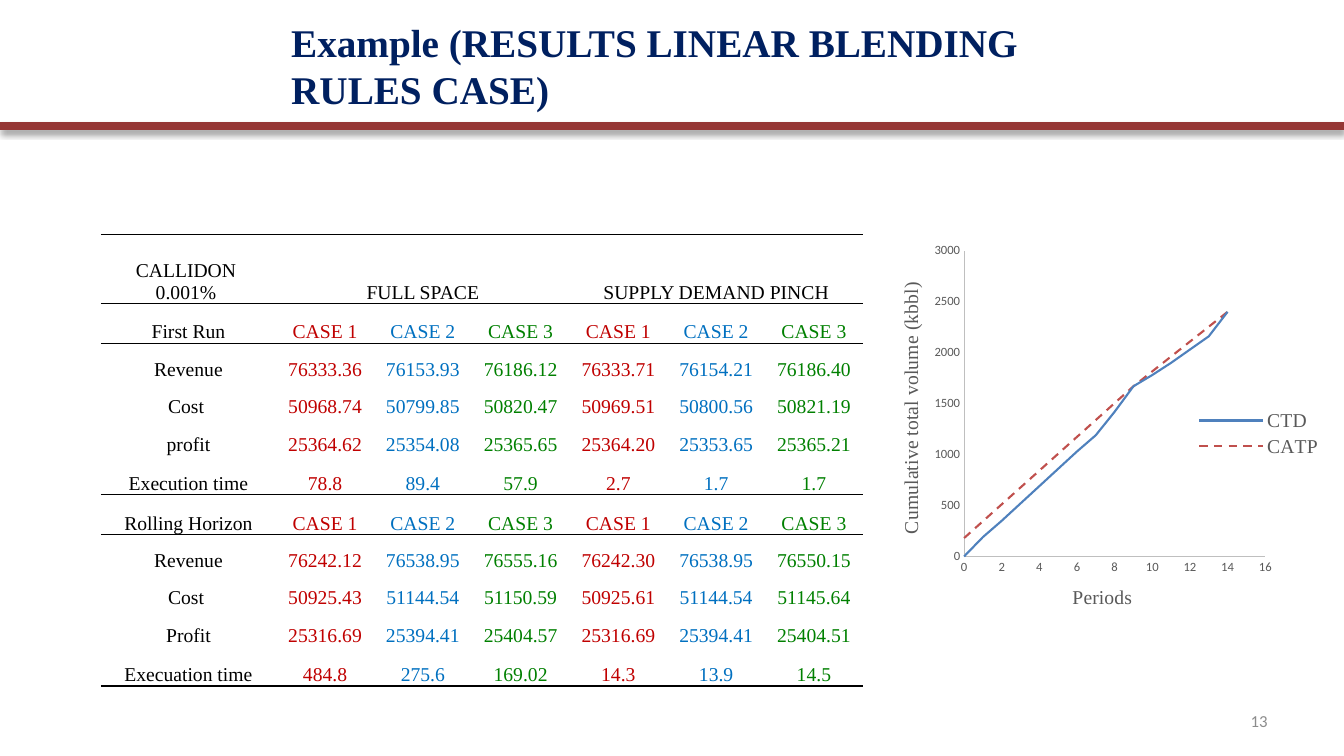
from lxml import etree
from pptx import Presentation
from pptx.chart.data import XyChartData
from pptx.dml.color import RGBColor
from pptx.enum.chart import XL_CHART_TYPE as ChartType, XL_LEGEND_POSITION as LegendPos, XL_TICK_MARK as TickMark
from pptx.enum.dml import MSO_LINE_DASH_STYLE as Dash
from pptx.enum.shapes import MSO_CONNECTOR as Connector
from pptx.enum.text import MSO_ANCHOR as Anchor, PP_ALIGN as Align
from pptx.oxml.ns import qn
from pptx.util import Inches, Pt

WIDTH, HEIGHT = Inches(13.33), Inches(7.5)
SERIF, SANS = "Times New Roman", "Calibri"
BLACK, GREY, AXIS_GREY = "000000", "595959", "BFBFBF"
CASE_COLOURS = ["C00000", "0070C0", "008000"] * 2
CASES = ["CASE 1", "CASE 2", "CASE 3"] * 2
NO_STYLE = "{2D5ABB26-0587-4C30-8999-92F81FD0307C}"

HEADER = ["CALLIDON \n0.001% ", "FULL SPACE", "", "", "SUPPLY DEMAND PINCH", "", ""]
RESULTS = [
    ["First Run", *CASES],
    ["Revenue", "76333.36", "76153.93", "76186.12", "76333.71", "76154.21", "76186.40"],
    ["Cost ", "50968.74", "50799.85", "50820.47", "50969.51", "50800.56", "50821.19"],
    ["profit", "25364.62", "25354.08", "25365.65", "25364.20", "25353.65", "25365.21"],
    ["Execution time", "78.8", "89.4", "57.9", "2.7", "1.7", "1.7"],
    ["Rolling Horizon", *CASES],
    ["Revenue", "76242.12", "76538.95", "76555.16", "76242.30", "76538.95", "76550.15"],
    ["Cost ", "50925.43", "51144.54", "51150.59", "50925.61", "51144.54", "51145.64"],
    ["Profit", "25316.69", "25394.41", "25404.57", "25316.69", "25394.41", "25404.51"],
    ["Execuation time", "484.8", "275.6", "169.02", "14.3", "13.9", "14.5"],
]
ROWS_RULED_ABOVE = {0, 1, 6}
ROWS_RULED_BELOW = {0, 5, 10}
COLUMN_SHARES = [1.74] + [0.97] * 6
ROW_SHARES = [0.68, 0.39] + ([0.37] * 3 + [0.39]) + [0.39] + ([0.37] * 3 + [0.39])

CTD = list(enumerate([0, 190, 350, 520, 690, 860, 1030, 1190, 1420, 1670, 1780, 1900, 2030, 2160, 2400]))
CATP = [(0, 180), (9, 1670), (14, 2400)]


def colour(hex_string):
    return RGBColor.from_string(hex_string)


def percent_box(left, top, width, height):
    return [round(side * share / 100) for side, share in
            zip((WIDTH, HEIGHT, WIDTH, HEIGHT), (left, top, width, height))]


def assign(target, values):
    for name, value in values.items():
        setattr(target, name, value)


def style_font(font, size, name, hex_string, bold=False):
    assign(font, {"size": Pt(size), "name": name, "bold": bold})
    font.color.rgb = colour(hex_string)


def child(parent, tag, **attributes):
    return etree.SubElement(parent, qn(tag), attributes)


def solid_fill(parent, hex_string):
    return child(child(parent, "a:solidFill"), "a:srgbClr", val=hex_string)


def add_text(slide, box, text, size, name, hex_string, bold=False, align=Align.LEFT, anchor=Anchor.TOP):
    frame = slide.shapes.add_textbox(*box).text_frame
    assign(frame, {"word_wrap": True, "vertical_anchor": anchor, "text": text})
    frame.paragraphs[0].alignment = align
    style_font(frame.paragraphs[0].runs[0].font, size, name, hex_string, bold)


def add_header_rule(slide, box):
    left, top, width, height = box
    rule = slide.shapes.add_connector(Connector.STRAIGHT, left, top, left + width, top + height)
    rule.line.width = Pt(6)
    rule.line.color.rgb = colour("953735")
    effects = child(rule.element.spPr, "a:effectLst")
    shadow = child(effects, "a:outerShdw", blurRad=str(Pt(4)), dist=str(Pt(3)), dir="5400000", rotWithShape="0")
    child(child(shadow, "a:srgbClr", val=BLACK), "a:alpha", val="40000")


def add_border(cell, side):
    properties = cell._tc.get_or_add_tcPr()
    border = etree.Element(qn(f"a:ln{side}"), w=str(Pt(1)))
    solid_fill(border, BLACK)
    properties.insert(0, border)


def fill_cell(cell, text, hex_string):
    assign(cell, {"text": text, "vertical_anchor": Anchor.BOTTOM, "margin_bottom": 0,
                  "margin_left": Inches(0.01), "margin_right": Inches(0.01), "margin_top": Inches(0.01)})
    cell.fill.background()
    for paragraph in cell.text_frame.paragraphs:
        paragraph.alignment = Align.CENTER
        style_font(paragraph.font, 14, SERIF, hex_string)
        for run in paragraph.runs:
            style_font(run.font, 14, SERIF, hex_string)


def add_results_table(slide, box):
    rows = [HEADER, *RESULTS]
    frame = slide.shapes.add_table(len(rows), len(HEADER), *box)
    for style_id in frame.element.iter(qn("a:tableStyleId")):
        style_id.text = NO_STYLE
    table = frame.table
    assign(table, {"first_row": False, "horz_banding": False})
    for column, share in zip(table.columns, COLUMN_SHARES):
        column.width = round(box[2] * share / sum(COLUMN_SHARES))
    for row, share in zip(table.rows, ROW_SHARES):
        row.height = round(box[3] * share / sum(ROW_SHARES))
    for r, texts in enumerate(rows):
        colours = [BLACK] * len(HEADER) if r == 0 else [BLACK, *CASE_COLOURS]
        for c, (text, hex_string) in enumerate(zip(texts, colours)):
            cell = table.cell(r, c)
            fill_cell(cell, text, hex_string)
            if r in ROWS_RULED_BELOW:
                add_border(cell, "B")
            if r in ROWS_RULED_ABOVE:
                add_border(cell, "T")
    for start in (1, 4):
        table.cell(0, start).merge(table.cell(0, start + 2))


def place_chart_part(part, index, **shares):
    for old_layout in part.findall(qn("c:layout")):
        part.remove(old_layout)
    layout = etree.Element(qn("c:layout"))
    manual = child(layout, "c:manualLayout")
    if part.tag == qn("c:plotArea"):
        child(manual, "c:layoutTarget", val="inner")
    for mode in ("xMode", "yMode"):
        child(manual, f"c:{mode}", val="edge")
    for name, share in shares.items():
        child(manual, f"c:{name}", val=str(share))
    part.insert(index, layout)


def style_axis(axis, title, maximum, step, rotation, x, y):
    assign(axis, {"minimum_scale": 0, "maximum_scale": maximum, "major_unit": step,
                  "has_major_gridlines": False, "major_tick_mark": TickMark.NONE,
                  "minor_tick_mark": TickMark.NONE})
    axis.format.line.width = Pt(0.75)
    axis.format.line.color.rgb = colour(AXIS_GREY)
    style_font(axis.tick_labels.font, 9, SANS, GREY)
    frame = axis.axis_title.text_frame
    frame.text = title
    style_font(frame.paragraphs[0].runs[0].font, 14, SERIF, GREY)
    title_part = axis._element.find(qn("c:title"))
    body = title_part.find(".//" + qn("a:bodyPr"))
    body.set("rot", rotation)
    body.set("vert", "horz")
    place_chart_part(title_part, 1, x=x, y=y)


def add_volume_chart(slide, box):
    data = XyChartData()
    for name, points in (("CTD", CTD), ("CATP", CATP)):
        series = data.add_series(name)
        for period, volume in points:
            series.add_data_point(period, volume)
    chart = slide.shapes.add_chart(ChartType.XY_SCATTER_LINES_NO_MARKERS, *box, data).chart
    assign(chart, {"has_title": False, "has_legend": True})
    style_font(chart.font, 10, SANS, BLACK)
    plot = chart.plots[0]
    plot.vary_by_categories = False
    for series, hex_string, dash in zip(plot.series, ("4F81BD", "C0504D"), (Dash.SOLID, Dash.DASH)):
        series.smooth = False
        assign(series.format.line, {"width": Pt(1.5), "dash_style": dash})
        series.format.line.color.rgb = colour(hex_string)
    style_axis(chart.category_axis, "Periods", 16, 2, "0", 0.4, 0.87)
    style_axis(chart.value_axis, "Cumulative total volume (kbbl)", 3000, 500, "-5400000", 0, 0.11)
    assign(chart.legend, {"position": LegendPos.RIGHT, "include_in_layout": False})
    style_font(chart.legend.font, 14, SERIF, GREY)
    place_chart_part(chart.element.find(".//" + qn("c:legend")), 1, x=0.69, y=0.43, w=0.29, h=0.14)
    place_chart_part(chart.element.find(".//" + qn("c:plotArea")), 0, x=0.16, y=0.04, w=0.69, h=0.77)


def main():
    deck = Presentation()
    assign(deck, {"slide_width": WIDTH, "slide_height": HEIGHT})
    slide = deck.slides.add_slide(deck.slide_layouts[6])
    add_header_rule(slide, percent_box(0, 16.67, 100, 0))
    add_text(slide, percent_box(20.93, 1.73, 59.11, 7.87),
             "Example (RESULTS LINEAR BLENDING RULES CASE)", 28, SERIF, "002060", bold=True)
    add_text(slide, percent_box(71.72, 92.67, 23.33, 5.33), "13", 12, SANS, "8C8C8C",
             align=Align.RIGHT, anchor=Anchor.MIDDLE)
    add_volume_chart(slide, percent_box(66.54, 31.07, 32.48, 52.53))
    add_results_table(slide, percent_box(7.5, 31.07, 56.71, 59.73))
    deck.save("out.pptx")


if __name__ == "__main__":
    main()
